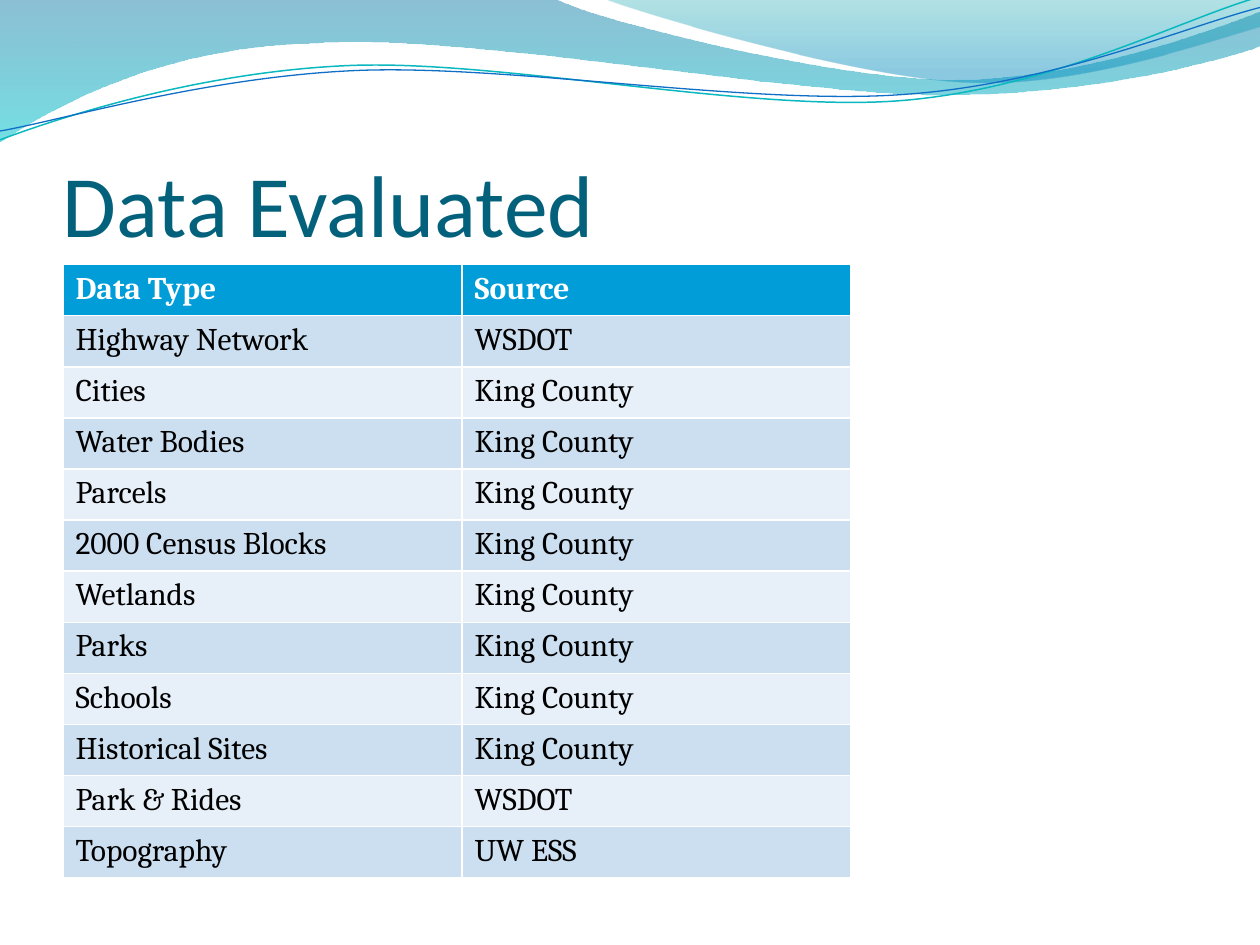
from math import cos, radians, sin

from lxml import etree
from pptx import Presentation
from pptx.dml.color import RGBColor
from pptx.enum.text import MSO_ANCHOR
from pptx.oxml.ns import qn
from pptx.util import Inches, Pt

BOTTOM = MSO_ANCHOR.BOTTOM
WIDE, HIGH = 10, 7.5
TILT = 2.7

HUES = {
    "title": "04617B", "head": "009DD9", "odd": "CCDFF1", "even": "E7EFF8",
    "white": "FFFFFF", "black": "000000", "teal": "0AB8BF", "blue": "0F6FC6",
    "deep": "0074A1", "aqua": "00C6CF", "sea": "00A1A9", "sky": "008BBF",
}

# A pair is a straight step to x, y; six numbers are a cubic curve.
WAVE = [(0, 0), (4.4, -0.01), (4.76, 0.17, 6.64, 0.63, 7.58, 0.63),
        (8.53, 0.63, 9.58, 0.26, 10, 0.09), (10.01, 0.36),
        (9.83, 0.44, 8.7, 0.76, 7.46, 0.75), (6.22, 0.75, 3.82, 0.28, 2.57, 0.34),
        (1.29, 0.36, 0.46, 0.83, -0.01, 1.13), (0, 0)]
CREST = [(4.79, -0.01), (5.09, 0.11, 6.82, 0.62, 7.69, 0.65),
         (8.56, 0.69, 9.61, 0.32, 10, 0.21), (10, 0), (4.79, -0.01)]
TEAL_LINE = [(0, 1.11), (0.48, 0.93, 1.58, 0.57, 2.77, 0.52),
             (3.95, 0.47, 5.93, 0.89, 7.13, 0.8), (8.33, 0.71, 9.38, 0.15, 9.98, -0.02)]
BLUE_LINE = [(0, 1.04), (0.47, 0.96, 1.64, 0.61, 2.83, 0.56),
             (4.03, 0.51, 5.97, 0.84, 7.17, 0.75), (8.36, 0.67, 9.41, 0.21, 10, 0.06)]

COUNTY = "King County"
ROWS = [
    ("Data Type", "Source"), ("Highway Network", "WSDOT"), ("Cities", COUNTY),
    ("Water Bodies", COUNTY), ("Parcels", COUNTY), ("2000 Census Blocks", COUNTY),
    ("Wetlands", COUNTY), ("Parks", COUNTY), ("Schools", COUNTY),
    ("Historical Sites", COUNTY), ("Park & Rides", "WSDOT"), ("Topography", "UW ESS"),
]
COLS = (Inches(19 / 6), Inches(37 / 12))
ROW = Pt(29.2)


def hue(name):
    return RGBColor.from_string(HUES[name])


def turn(steps, pivot, angle):
    """Rotate every point of the steps clockwise about the pivot."""
    c, s = cos(radians(angle)), sin(radians(angle))
    px, py = pivot
    out = []
    for step in steps:
        flat = []
        for x, y in zip(step[::2], step[1::2]):
            dx, dy = x - px, y - py
            flat += [px + dx * c - dy * s, py + dx * s + dy * c]
        out.append(tuple(flat))
    return out


def add_shape(slide, steps, close):
    """Build an outline from all points, then join each three into a curve."""
    dots = [(Inches(x), Inches(y)) for step in steps
            for x, y in zip(step[::2], step[1::2])]
    pen = slide.shapes.build_freeform(*dots[0])
    pen.add_line_segments(dots[1:], close=close)
    shape = pen.convert_to_shape()
    shape.shadow.inherit = False
    lines = iter(list(shape.element.spPr.iter(qn("a:lnTo"))))
    for step in steps[1:]:
        first = next(lines)
        if len(step) == 2:
            continue
        curve = etree.Element(qn("a:cubicBezTo"))
        first.addprevious(curve)
        for line in (first, next(lines), next(lines)):
            curve.append(line[0])
            line.getparent().remove(line)
    return shape


def add_wave(slide, steps, stops):
    """Draw a closed wave; each stop is position, colour and opacity in percent."""
    shape = add_shape(slide, steps, True)
    shape.line.fill.background()
    shape.fill.gradient()
    shape.fill.gradient_angle = 270
    for stop, (place, name, _) in zip(shape.fill.gradient_stops, stops):
        stop.position = place
        stop.color.rgb = hue(name)
    for tint, (_, _, clear) in zip(shape.element.spPr.iter(qn("a:srgbClr")), stops):
        etree.SubElement(tint, qn("a:alpha"), val=str(clear * 1000))


def add_curve(slide, steps, pivot, name, size):
    shape = add_shape(slide, turn(steps, pivot, TILT), False)
    shape.rotation = 360 - TILT
    shape.fill.background()
    shape.line.color.rgb = hue(name)
    shape.line.width = Pt(size)


def add_run(para, text, font, size, name, bold=False):
    run = para.add_run()
    run.text = text
    run.font.name = font
    run.font.size = Pt(size)
    run.font.bold = bold
    run.font.color.rgb = hue(name)


def add_title(slide, text):
    box = slide.shapes.add_textbox(Inches(WIDE * 0.05), Inches(0.77),
                                   Inches(WIDE * 0.9), Inches(1.25))
    frame = box.text_frame
    frame.word_wrap = True
    frame.vertical_anchor = BOTTOM
    frame.margin_left = frame.margin_right = frame.margin_bottom = 0
    frame.margin_top = Inches(0.05)
    add_run(frame.paragraphs[0], text, "Calibri", 50, "title")


def fill_cell(cell, text, row):
    head = row == 0
    cell.fill.solid()
    cell.fill.fore_color.rgb = hue("head" if head else "odd" if row % 2 else "even")
    add_run(cell.text_frame.paragraphs[0], text, "Cambria", 18,
            "white" if head else "black", head)


def add_grid(slide):
    frame = slide.shapes.add_table(len(ROWS), len(COLS), Inches(WIDE * 0.05),
                                   Inches(HIGH * 0.28), sum(COLS), ROW * len(ROWS))
    table = frame.table
    for col, width in zip(table.columns, COLS):
        col.width = width
    for r, texts in enumerate(ROWS):
        table.rows[r].height = ROW
        for c, text in enumerate(texts):
            fill_cell(table.cell(r, c), text, r)


def main():
    deck = Presentation()
    deck.slide_width, deck.slide_height = Inches(WIDE), Inches(HIGH)
    slide = deck.slides.add_slide(deck.slide_layouts[6])
    add_wave(slide, WAVE, [(0, "deep", 45), (1, "aqua", 55)])
    add_wave(slide, CREST, [(0, "sea", 30), (0.8, "sky", 45)])
    add_curve(slide, TEAL_LINE, (4.99, 0.58), "teal", 0.85)
    add_curve(slide, BLUE_LINE, (5, 0.59), "blue", 0.75)
    add_title(slide, "Data Evaluated")
    add_grid(slide)
    deck.save("out.pptx")


if __name__ == "__main__":
    main()
